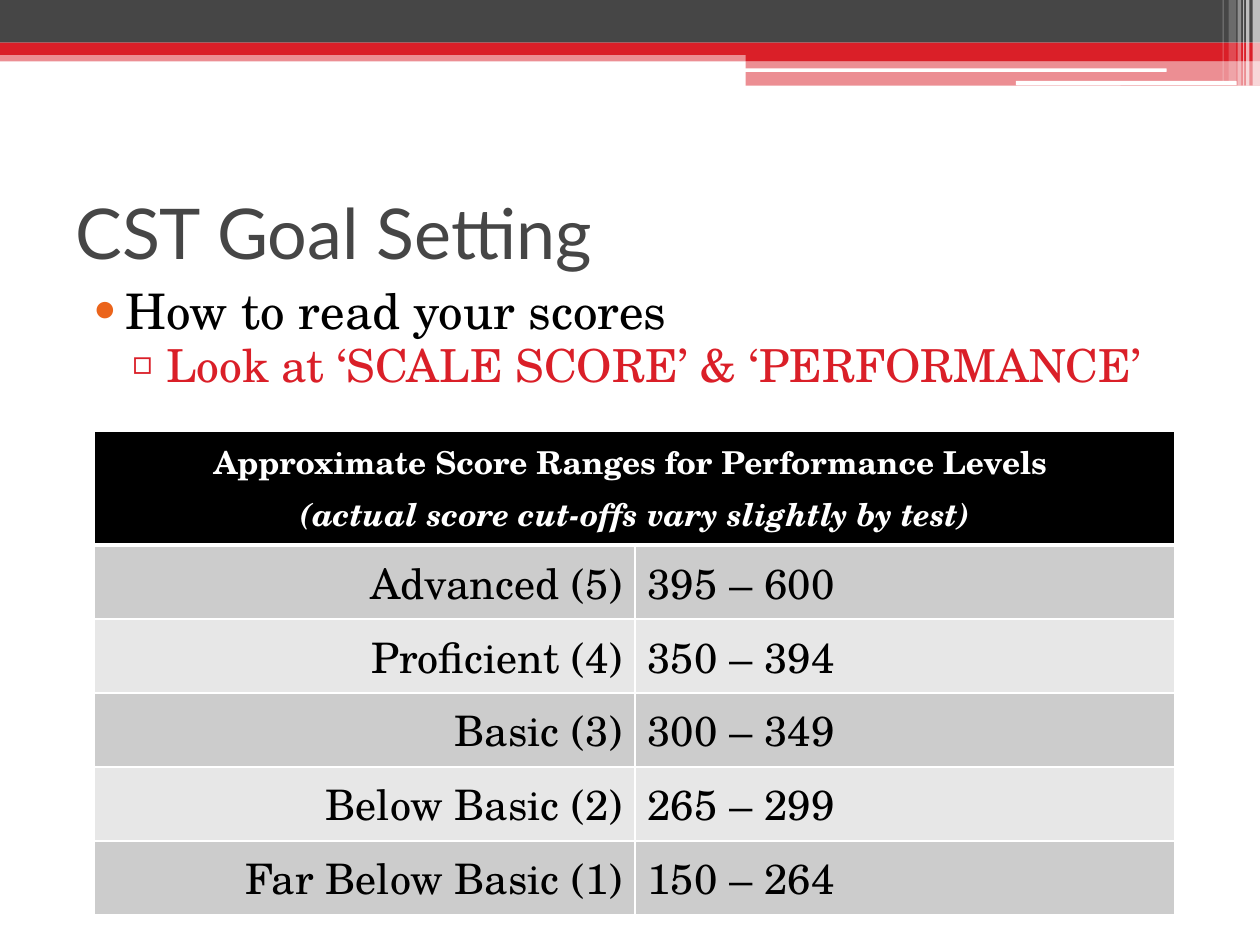
from dataclasses import dataclass

from lxml import etree
from pptx import Presentation
from pptx.dml.color import RGBColor
from pptx.enum.shapes import MSO_SHAPE
from pptx.enum.text import MSO_ANCHOR, PP_ALIGN
from pptx.oxml.ns import qn
from pptx.util import Cm, Pt

RECTANGLE, ROUNDED = MSO_SHAPE.RECTANGLE, MSO_SHAPE.ROUNDED_RECTANGLE
TOP, MIDDLE = MSO_ANCHOR.TOP, MSO_ANCHOR.MIDDLE
LEFT, CENTER, RIGHT = PP_ALIGN.LEFT, PP_ALIGN.CENTER, PP_ALIGN.RIGHT


@dataclass(frozen=True)
class Theme:
    dark: str = "464646"
    red: str = "DA1F28"
    orange: str = "EB641B"
    white: str = "FFFFFF"
    black: str = "000000"
    row_fills: tuple = ("CCCCCC", "E7E7E7")
    heading_font: str = "Lato"
    body_font: str = "TeX Gyre Schola"
    title_size: int = 40
    bullet_size: int = 28
    sub_bullet_size: int = 26
    header_size: int = 18
    cell_size: int = 24


THEME = Theme()


@dataclass(frozen=True)
class Bar:
    left: float
    top: float
    width: float
    height: float
    color: str
    opacity: int = 100
    kind: int = RECTANGLE


@dataclass(frozen=True)
class Bullet:
    text: str
    mark: str
    mark_color: str
    color: str
    size: int
    level: int
    margin: float
    indent: float


# Banner across the top, from back to front (cm)
BANNER = [
    Bar(0, 1.01, 25.4, 0.23, THEME.red, 50),
    Bar(0, 0, 25.4, 0.86, THEME.dark),
    Bar(0, 0.86, 25.4, 0.25, THEME.red),
    Bar(15.03, 0.99, 10.37, 0.24, THEME.red),
    Bar(15.03, 1.23, 10.37, 0.5, THEME.red, 50),
    Bar(15.01, 1.38, 8.51, 0.07, THEME.white, kind=ROUNDED),
    Bar(20.48, 1.63, 4.45, 0.09, THEME.white, kind=ROUNDED),
]
# Pale stripes at the right end: left, width, height, opacity
STRIPES = [
    (25.25, 0.15, 1.73, 65),
    (25.12, 0.07, 1.73, 65),
    (25.06, 0.02, 1.73, 60),
    (24.95, 0.07, 1.73, 40),
    (24.77, 0.15, 1.63, 20),
    (24.65, 0.02, 1.63, 30),
]
BULLETS = [
    Bullet("How to read your scores", "•", THEME.orange, THEME.black,
           THEME.bullet_size, 0, 1.02, -0.71),
    Bullet("Look at ‘SCALE SCORE’ & ‘PERFORMANCE’", "▫", THEME.red, THEME.red,
           THEME.sub_bullet_size, 1, 1.83, -0.69),
]
HEADER = [
    ("Approximate Score Ranges for Performance Levels ", False),
    ("(actual score cut-offs vary slightly by test)", True),
]
SCORES = [
    ("Advanced (5)", "395 – 600"),
    ("Proficient (4)", "350 – 394"),
    ("Basic (3)", "300 – 349"),
    ("Below Basic (2)", "265 – 299"),
    ("Far Below Basic (1)", "150 – 264"),
]


def add_bar(slide, bar: Bar) -> None:
    shape = slide.shapes.add_shape(
        bar.kind, Cm(bar.left), Cm(bar.top), Cm(bar.width), Cm(bar.height))
    shape.shadow.inherit = False
    shape.line.fill.background()
    shape.fill.solid()
    shape.fill.fore_color.rgb = RGBColor.from_string(bar.color)
    if bar.opacity < 100:
        color = shape.fill._xPr.find(qn("a:solidFill"))[0]
        etree.SubElement(color, qn("a:alpha"), val=str(bar.opacity * 1000))


def add_frame(slide, left: float, top: float, width: float, height: float, anchor):
    shape = slide.shapes.add_textbox(Cm(left), Cm(top), Cm(width), Cm(height))
    frame = shape.text_frame
    frame.word_wrap = True
    frame.vertical_anchor = anchor
    return frame


def write(paragraph, text: str, color: str, size: int, name: str = THEME.body_font,
          bold: bool = False, italic: bool = False, alignment=LEFT) -> None:
    paragraph.alignment = alignment
    run = paragraph.add_run()
    run.text = text
    formats = {"name": name, "size": Pt(size), "bold": bold, "italic": italic}
    for attribute, value in formats.items():
        setattr(run.font, attribute, value)
    run.font.color.rgb = RGBColor.from_string(color)


def next_paragraph(frame, index: int):
    return frame.add_paragraph() if index else frame.paragraphs[0]


def write_bullet(paragraph, bullet: Bullet) -> None:
    write(paragraph, bullet.text, bullet.color, bullet.size)
    paragraph.level = bullet.level
    paragraph.space_before = Pt(3)
    paragraph.line_spacing = 0.85
    properties = paragraph._p.get_or_add_pPr()
    properties.set("marL", str(Cm(bullet.margin)))
    properties.set("indent", str(Cm(bullet.indent)))
    color = etree.SubElement(properties, qn("a:buClr"))
    etree.SubElement(color, qn("a:srgbClr"), val=bullet.mark_color)
    etree.SubElement(properties, qn("a:buFont"), typeface=THEME.body_font)
    etree.SubElement(properties, qn("a:buChar"), char=bullet.mark)


def style_cell(cell, fill: str, bottom: int = 1) -> None:
    properties = cell._tc.get_or_add_tcPr()
    for side, width in {"lnL": 1, "lnR": 1, "lnT": 1, "lnB": bottom}.items():
        line = etree.SubElement(properties, qn(f"a:{side}"), w=str(Pt(width)))
        solid = etree.SubElement(line, qn("a:solidFill"))
        etree.SubElement(solid, qn("a:srgbClr"), val=THEME.white)
    cell.fill.solid()
    cell.fill.fore_color.rgb = RGBColor.from_string(fill)


def add_score_table(slide) -> None:
    header_height, row_height = 2.3, 1.49
    table = slide.shapes.add_table(
        len(SCORES) + 1, 2, Cm(1.91), Cm(8.69), Cm(21.78),
        Cm(header_height + row_height * len(SCORES))).table
    table.first_row = table.horz_banding = False
    for index, row in enumerate(table.rows):
        row.height = Cm(row_height if index else header_height)

    # Header across both columns
    for cell in table.rows[0].cells:
        style_cell(cell, THEME.black, bottom=3)
    header = table.cell(0, 0)
    header.merge(table.cell(0, 1))
    for index, (text, italic) in enumerate(HEADER):
        paragraph = next_paragraph(header.text_frame, index)
        paragraph.space_before = Pt(2 * index)
        write(paragraph, text, THEME.white, THEME.header_size,
              bold=True, italic=italic, alignment=CENTER)

    # Levels and their score ranges
    for index, texts in enumerate(SCORES):
        for column, (text, alignment) in enumerate(zip(texts, (RIGHT, LEFT))):
            cell = table.cell(index + 1, column)
            style_cell(cell, THEME.row_fills[index % 2], bottom=1)
            write(cell.text_frame.paragraphs[0], text, THEME.black,
                  THEME.cell_size, alignment=alignment)


def main() -> None:
    presentation = Presentation()
    presentation.slide_width, presentation.slide_height = Cm(25.4), Cm(19.05)
    slide = presentation.slides.add_slide(presentation.slide_layouts[6])

    # Banner
    stripes = [Bar(left, 0, width, height, THEME.white, opacity)
               for left, width, height, opacity in STRIPES]
    for bar in BANNER + stripes:
        add_bar(slide, bar)

    # Title and bullets
    title = add_frame(slide, 1.27, 3.18, 22.86, 2.97, MIDDLE)
    write(title.paragraphs[0], "CST Goal Setting", THEME.dark,
          THEME.title_size, name=THEME.heading_font)
    body = add_frame(slide, 1.27, 5.72, 22.86, 12.55, TOP)
    for index, bullet in enumerate(BULLETS):
        write_bullet(next_paragraph(body, index), bullet)

    add_score_table(slide)
    presentation.save("out.pptx")


if __name__ == "__main__":
    main()
